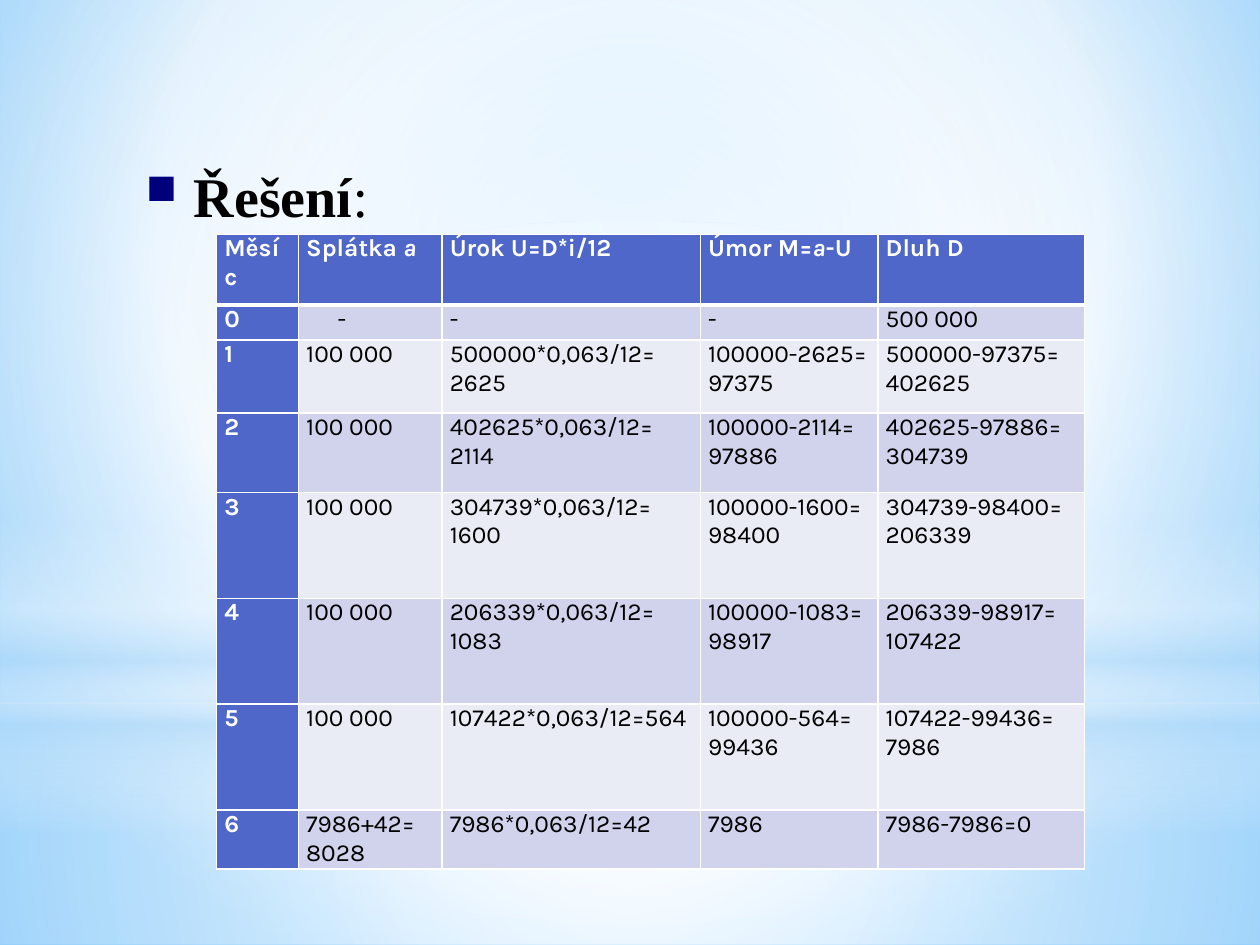
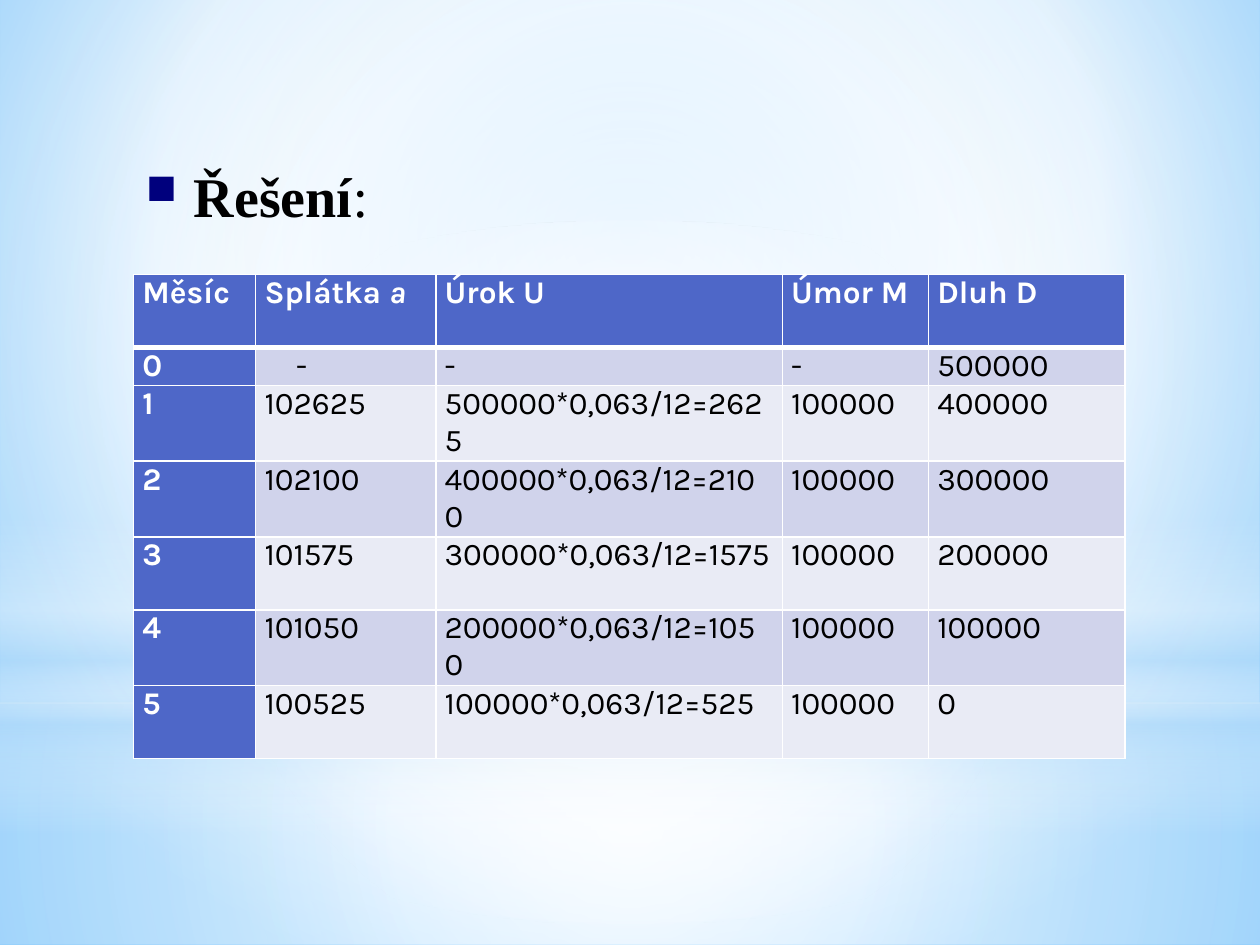
from dataclasses import dataclass

from lxml import etree
from pptx import Presentation
from pptx.dml.color import RGBColor
from pptx.enum import shapes
from pptx.oxml.ns import qn
from pptx.util import Inches, Pt


@dataclass(frozen=True)
class Theme:
    heading_font: str = "Times New Roman"
    table_font: str = "Karla"
    heading_size: int = 32
    ink: str = "000000"
    white: str = "FFFFFF"
    accent: str = "4E67C8"
    band_dark: str = "D0D3EB"
    band_light: str = "E9EBF5"
    bullet: str = "00007D"
    haze: str = "B4DCFA"
    sky: str = "9ED5FF"
    deep_sky: str = "5BB9FF"
    thin_line: int = 1
    thick_line: int = 3


THEME = Theme()
CENTRE = (50, 50, 50, 50)

# Gradient stops: position in percent, colour, opacity in percent.
BACKGROUND_STOPS = [(0, THEME.sky, 100), (60, THEME.white, 100), (100, THEME.deep_sky, 100)]
BACKGROUND_FOCUS = (20, 10, 20, 60)

# Shape kind, box, stops, focus of a circular gradient (None: top to bottom).
BACKDROP = [
    (shapes.MSO_SHAPE.RECTANGLE, (0, 5.58, 10, 1.92),
     [(0, THEME.white, 91), (37, THEME.white, 76), (100, THEME.haze, 79)], CENTRE),
    (shapes.MSO_SHAPE.RECTANGLE, (0, 0, 10, 5.58),
     [(0, THEME.white, 89), (48, THEME.white, 62), (100, THEME.haze, 79)], CENTRE),
    (shapes.MSO_SHAPE.RECTANGLE, (0, 4.12, 10, 2.5),
     [(0, THEME.white, 0), (29, THEME.white, 30), (45, THEME.haze, 40),
      (55, THEME.white, 26), (65, THEME.haze, 60), (100, THEME.white, 0)], None),
    (shapes.MSO_SHAPE.OVAL, (0, 1.75, 10, 5.58),
     [(0, THEME.white, 100), (56, THEME.white, 0)], CENTRE),
]

HEADING = ("Řešení", ":")
HEADING_BOX = (1.06, 1.23, 8.19, 5.39)

# In a cell, "\n" starts a paragraph and "|" switches italics on or off.
SCHEDULES = [
    {
        "corner": (1.72, 1.86),
        "columns": [0.65, 1.14, 2.05, 1.41, 1.64],
        "heights": [0.56, 0.28, 0.58, 0.63, 0.84, 0.84, 0.84, 0.28],
        "size": 14,
        "inset": 0.06,
        "rows": [
            ("Měsíc", "Splátka |a", "Úrok U=D*i/12", "Úmor M=|a|-U", "Dluh D"),
            ("0", "-", "-", "-", "500 000"),
            ("1", "100 000", "500000*0,063/12=\n2625", "100000-2625=\n97375",
             "500000-97375=\n402625"),
            ("2", "100 000", "402625*0,063/12=\n2114", "100000-2114=\n97886",
             "402625-97886=\n304739"),
            ("3", "100 000", "304739*0,063/12=\n1600", "100000-1600=\n98400",
             "304739-98400=\n206339"),
            ("4", "100 000", "206339*0,063/12=\n1083", "100000-1083=\n98917",
             "206339-98917=\n107422"),
            ("5", "100 000", "107422*0,063/12=564", "100000-564=\n99436",
             "107422-99436=\n7986"),
            ("6", "7986+42=\n8028", "7986*0,063/12=42", "7986", "7986-7986=0"),
        ],
    },
    {
        "corner": (1.06, 2.18),
        "columns": [0.97, 1.43, 2.75, 1.16, 1.56],
        "heights": [0.58, 0.29] + [0.58] * 5,
        "size": 18,
        "inset": 0.07,
        "rows": [
            ("Měsíc", "Splátka |a", "Úrok U", "Úmor M", "Dluh D"),
            ("0", "-", "-", "-", "500000"),
            ("1", "102625", "500000*0,063/12=2625", "100000", "400000"),
            ("2", "102100", "400000*0,063/12=2100", "100000", "300000"),
            ("3", "101575", "300000*0,063/12=1575", "100000", "200000"),
            ("4", "101050", "200000*0,063/12=1050", "100000", "100000"),
            ("5", "100525", "100000*0,063/12=525", "100000", "0"),
        ],
    },
]


def inches(values):
    return [Inches(value) for value in values]


def add_node(parent, tag, **attributes):
    return etree.SubElement(parent, qn(tag), {k: str(v) for k, v in attributes.items()})


def set_gradient(fill, element, stops, focus):
    """Fill with the stops; element is the XML that holds the fill."""
    fill.gradient()
    gradient = next(element.iter(qn("a:gradFill")))
    gradient.clear()
    gradient.set("rotWithShape", "1")
    stop_list = add_node(gradient, "a:gsLst")
    for position, color, opacity in stops:
        stop = add_node(stop_list, "a:gs", pos=position * 1000)
        color_node = add_node(stop, "a:srgbClr", val=color)
        if opacity < 100:
            add_node(color_node, "a:alpha", val=opacity * 1000)
    if focus:
        circle = add_node(gradient, "a:path", path="circle")
        sides = {side: share * 1000 for side, share in zip("ltrb", focus)}
        add_node(circle, "a:fillToRect", **sides)
    else:
        add_node(gradient, "a:lin", ang=90 * 60000, scaled=0)


def add_backdrop(slide):
    set_gradient(slide.background.fill, slide.element, BACKGROUND_STOPS, BACKGROUND_FOCUS)
    for kind, box, stops, focus in BACKDROP:
        shape = slide.shapes.add_shape(kind, *inches(box))
        shape.shadow.inherit = False
        shape.line.fill.background()
        set_gradient(shape.fill, shape.element, stops, focus)


def format_run(run, font, size, color, bold, italic=False):
    run.font.name = font
    run.font.size = Pt(size)
    run.font.color.rgb = RGBColor.from_string(color)
    run.font.bold = bold
    run.font.italic = italic


def add_heading(slide):
    frame = slide.shapes.add_textbox(*inches(HEADING_BOX)).text_frame
    frame.word_wrap = True
    paragraph = frame.paragraphs[0]
    for part, bold in zip(HEADING, (True, False)):
        run = paragraph.add_run()
        run.text = part
        format_run(run, THEME.heading_font, THEME.heading_size, THEME.ink, bold)
    properties = paragraph._p.get_or_add_pPr()
    properties.set("marL", str(Inches(0.38)))
    properties.set("indent", str(Inches(-0.38)))
    add_node(add_node(properties, "a:spcBef"), "a:spcPct", val=20000)
    add_node(add_node(properties, "a:buClr"), "a:srgbClr", val=THEME.bullet)
    add_node(properties, "a:buSzPct", val=75000)
    add_node(properties, "a:buChar", char="■")


def set_borders(cell, row):
    """White lines, thicker between the header and the body."""
    thick_sides = {0: "B", 1: "T"}
    properties = cell._tc.get_or_add_tcPr()
    for side in "LRTB":
        width = THEME.thick_line if thick_sides.get(row) == side else THEME.thin_line
        line = add_node(properties, f"a:ln{side}", w=Pt(width))
        add_node(add_node(line, "a:solidFill"), "a:srgbClr", val=THEME.white)


def fill_cell(cell, content, row, column, schedule):
    emphasised = row == 0 or column == 0
    band = THEME.band_dark if row % 2 else THEME.band_light
    set_borders(cell, row)
    cell.fill.solid()
    cell.fill.fore_color.rgb = RGBColor.from_string(THEME.accent if emphasised else band)
    cell.margin_left = cell.margin_right = Inches(schedule["inset"])
    cell.margin_top = cell.margin_bottom = 0
    frame = cell.text_frame
    for index, line in enumerate(content.split("\n")):
        paragraph = frame.add_paragraph() if index else frame.paragraphs[0]
        for part_index, part in enumerate(line.split("|")):
            run = paragraph.add_run()
            run.text = part
            format_run(run, THEME.table_font, schedule["size"],
                       THEME.white if emphasised else THEME.ink,
                       emphasised, part_index % 2 == 1)
        if column == 1 and line == "-":
            paragraph._p.get_or_add_pPr().set("marL", str(Inches(0.25)))


def add_schedule(slide, schedule):
    rows, columns, heights = schedule["rows"], schedule["columns"], schedule["heights"]
    box = (*schedule["corner"], sum(columns), sum(heights))
    table = slide.shapes.add_table(len(rows), len(columns), *inches(box)).table
    table.horz_banding = False
    for table_column, width in zip(table.columns, inches(columns)):
        table_column.width = width
    for table_row, height in zip(table.rows, inches(heights)):
        table_row.height = height
    for row, contents in enumerate(rows):
        for column, content in enumerate(contents):
            fill_cell(table.cell(row, column), content, row, column, schedule)


def main():
    presentation = Presentation()
    presentation.slide_width, presentation.slide_height = inches((10, 7.5))
    for schedule in SCHEDULES:
        slide = presentation.slides.add_slide(presentation.slide_layouts[6])
        add_backdrop(slide)
        add_heading(slide)
        add_schedule(slide, schedule)
    presentation.save("out.pptx")


if __name__ == "__main__":
    main()
